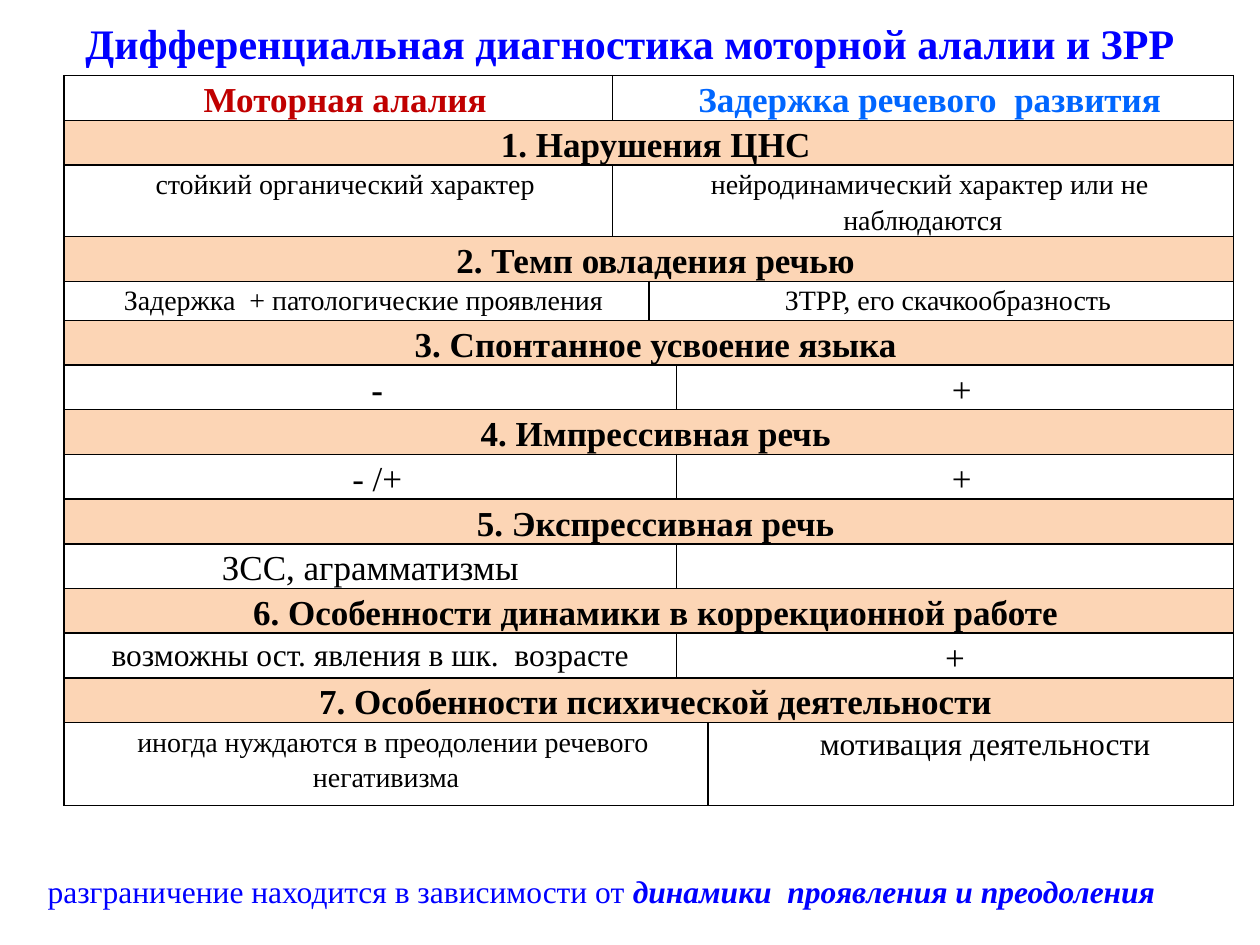
from lxml import etree
from pptx import Presentation
from pptx.dml.color import RGBColor
from pptx.enum import text
from pptx.oxml import ns
from pptx.util import Inches, Pt

FONT = "Times New Roman"
BLUE, RED, SKY, BLACK, PEACH = "0000FF", "C00000", "0066FF", "000000", "FCD5B5"
COLUMNS = [4.35, 0.29, 0.22, 0.25, 4.17]
FIRST_LINE = (0, 0.11)
HANGING = (0.38, -0.38)

HEADER = [("Моторная алалия", RED), ("Задержка речевого  развития", SKY)]

# Each section: heading, column where the right cell starts, row height,
# then left and right cells as (text, size, bold, indent)
SECTIONS = [
    ("1. Нарушения ЦНС", 1, 0.31,
     ("стойкий органический характер", 16, False, FIRST_LINE),
     ("нейродинамический характер или не наблюдаются", 16, False, FIRST_LINE)),
    ("2. Темп овладения речью", 2, 0.31,
     ("Задержка  + патологические проявления", 16, False, FIRST_LINE),
     ("ЗТРР, его скачкообразность", 16, False, FIRST_LINE)),
    ("3. Спонтанное усвоение языка", 3, 0.34,
     ("-", 20, True, FIRST_LINE), ("+", 20, False, FIRST_LINE)),
    ("4. Импрессивная речь", 3, 0.34,
     ("- /+", 20, False, FIRST_LINE), ("+", 20, False, FIRST_LINE)),
    ("5. Экспрессивная речь", 3, 0.34,
     ("ЗСС, аграмматизмы", 20, False, HANGING), None),
    ("6. Особенности динамики в коррекционной работе", 3, 0.34,
     ("возможны ост. явления в шк.  возрасте", 18, False, HANGING),
     ("+", 20, False, HANGING)),
    ("7. Особенности психической деятельности", 4, 0.66,
     ("иногда нуждаются в преодолении речевого негативизма", 16, False, FIRST_LINE),
     ("мотивация деятельности", 18, False, (0, 0.23))),
]


def rgb(value):
    return RGBColor.from_string(value)


def style(span, size, color, bold=False, italic=False):
    span.font.name = FONT
    span.font.size = Pt(size)
    span.font.bold = bold
    span.font.italic = italic
    span.font.color.rgb = rgb(color)


def add_borders(cell):
    properties = cell._tc.get_or_add_tcPr()
    for index, side in enumerate(("lnL", "lnR", "lnT", "lnB")):
        line = etree.Element(ns.qn("a:" + side), w=str(Pt(1)))
        fill = etree.SubElement(line, ns.qn("a:solidFill"))
        etree.SubElement(fill, ns.qn("a:srgbClr"), val=BLACK)
        properties.insert(index, line)


def fill_cell(cell, content, color=BLACK):
    if content is None:
        return
    words, size, bold, (left, first) = content
    cell.text_frame.text = words
    para = cell.text_frame.paragraphs[0]
    para.alignment = text.PP_ALIGN.CENTER
    para.line_spacing = 1.15
    para.space_before = Pt(6)
    settings = para._p.get_or_add_pPr()
    settings.set("marL", str(Inches(left)))
    settings.set("indent", str(Inches(first)))
    style(para.runs[0], size, color, bold)


def add_title(page, left, top, width, height):
    title = page.shapes.title
    title.left, title.top = Inches(left), Inches(top)
    title.width, title.height = Inches(width), Inches(height)
    frame = title.text_frame
    frame.text = "Дифференциальная диагностика моторной алалии и ЗРР"
    frame.vertical_anchor = text.MSO_ANCHOR.MIDDLE
    para = frame.paragraphs[0]
    para.alignment = text.PP_ALIGN.CENTER
    style(para.runs[0], 24, BLUE, True)


def add_comparison(page, left, top, width, height):
    count = 1 + 2 * len(SECTIONS)
    table = page.shapes.add_table(count, len(COLUMNS), Inches(left), Inches(top),
                                  Inches(width), Inches(height)).table
    table.first_row = table.horz_banding = False
    for column, size in zip(table.columns, COLUMNS):
        column.width = Inches(size)
    for row in table.rows:
        row.height = Inches(0.34)
    for cell in table.iter_cells():
        cell.margin_left = cell.margin_right = Inches(0.04)
        cell.margin_top = cell.margin_bottom = 0
        cell.fill.background()
        add_borders(cell)

    def merge(row, start, end):
        cell = table.cell(row, start)
        if end > start:
            cell.merge(table.cell(row, end))
        return cell

    def split(row, start):
        return merge(row, 0, start - 1), merge(row, start, len(COLUMNS) - 1)

    # Column names
    for cell, (words, color) in zip(split(0, 1), HEADER):
        fill_cell(cell, (words, 20, True, FIRST_LINE), color)

    # Heading band and a pair of cells for every section
    for index, (heading, start, size, *pair) in enumerate(SECTIONS):
        row = 1 + 2 * index
        band = merge(row, 0, len(COLUMNS) - 1)
        band.fill.solid()
        band.fill.fore_color.rgb = rgb(PEACH)
        fill_cell(band, (heading, 20, True, FIRST_LINE))
        table.rows[row + 1].height = Inches(size)
        for cell, content in zip(split(row + 1, start), pair):
            fill_cell(cell, content)


def add_conclusion(page, left, top, width, height):
    box = page.shapes.add_textbox(Inches(left), Inches(top), Inches(width), Inches(height))
    box.text_frame.word_wrap = True
    para = box.text_frame.paragraphs[0]
    for words, strong in (("разграничение находится в зависимости от ", False),
                          ("динамики  проявления и преодоления", True)):
        span = para.add_run()
        span.text = words
        style(span, 18, BLUE, strong, strong)


def main():
    deck = Presentation()
    deck.slide_width, deck.slide_height = Inches(10), Inches(7.5)
    page = deck.slides.add_slide(deck.slide_layouts[5])
    add_title(page, 0, 0, 10, 0.68)
    add_comparison(page, 0.51, 0.6, 9.28, 5.4)
    add_conclusion(page, 0.28, 6.87, 10, 0.4)
    deck.save("out.pptx")


if __name__ == "__main__":
    main()
